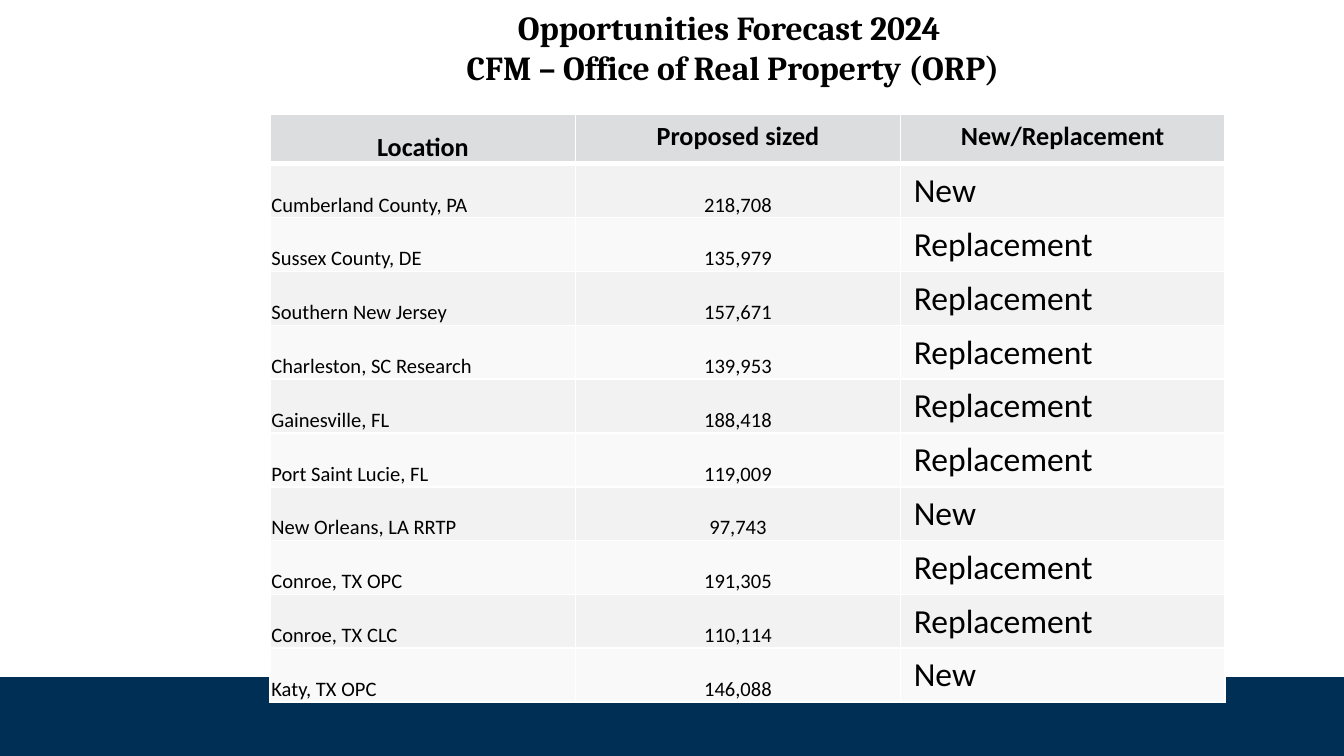
from dataclasses import dataclass

from lxml import etree
from pptx import Presentation
from pptx.dml.color import RGBColor
from pptx.enum.shapes import MSO_SHAPE
from pptx.enum.text import MSO_ANCHOR, MSO_AUTO_SIZE, PP_ALIGN
from pptx.oxml.ns import qn
from pptx.util import Pt

RECTANGLE = MSO_SHAPE.RECTANGLE
TOP, BOTTOM = MSO_ANCHOR.TOP, MSO_ANCHOR.BOTTOM
LEFT, CENTER = PP_ALIGN.LEFT, PP_ALIGN.CENTER
GROW_TO_TEXT = MSO_AUTO_SIZE.SHAPE_TO_FIT_TEXT


@dataclass(frozen=True)
class Theme:
    navy: str = "002F56"
    text: str = "000000"
    border: str = "FFFFFF"
    header_fill: str = "DCDDDE"
    band_fills: tuple = ("F2F2F2", "F9F9F9")
    title_font: str = "Cambria"
    body_font: str = "Calibri"
    title_size: int = 18
    header_size: int = 14
    body_size: int = 11
    status_size: int = 18


THEME = Theme()

TITLE = ["Opportunities Forecast 2024 ", "CFM – Office of Real Property (ORP)"]
HEADERS = ["Location", "Proposed sized", "New/Replacement"]
PROJECTS = [
    ("Cumberland County, PA", "218,708", "New"),
    ("Sussex County, DE", "135,979", "Replacement"),
    ("Southern New Jersey", "157,671", "Replacement"),
    ("Charleston, SC Research", "139,953", "Replacement"),
    ("Gainesville, FL", "188,418", "Replacement"),
    ("Port Saint Lucie, FL", "119,009", "Replacement"),
    ("New Orleans, LA RRTP", "97,743", "New"),
    ("Conroe, TX OPC", "191,305", "Replacement"),
    ("Conroe, TX CLC", "110,114", "Replacement"),
    ("Katy, TX OPC", "146,088", "New"),
]
COLUMN_SHARES = (0.32, 0.34, 0.34)
HEADER_HEIGHT = 26.6


def style_paragraph(paragraph, font_name, size, bold, alignment):
    paragraph.alignment = alignment
    font = paragraph.font
    font.name, font.size, font.bold = font_name, Pt(size), bold
    font.color.rgb = RGBColor.from_string(THEME.text)


def set_borders(cell, top=1, bottom=1):
    """Draw the cell's four borders, with widths in points."""
    properties = cell._tc.get_or_add_tcPr()
    for tag, width in (("lnL", 1), ("lnR", 1), ("lnT", top), ("lnB", bottom)):
        line = etree.SubElement(properties, qn(f"a:{tag}"), w=str(Pt(width)))
        fill = etree.SubElement(line, qn("a:solidFill"))
        etree.SubElement(fill, qn("a:srgbClr"), val=THEME.border)


def fill_cell(cell, text, fill, size, bold, alignment, tight):
    cell.text = text
    style_paragraph(cell.text_frame.paragraphs[0], THEME.body_font, size, bold, alignment)
    cell.fill.solid()
    cell.fill.fore_color.rgb = RGBColor.from_string(fill)
    cell.vertical_anchor = BOTTOM if tight else TOP
    if tight:
        cell.margin_left = cell.margin_top = cell.margin_right = Pt(0.7)
        cell.margin_bottom = Pt(0)


def add_footer_band(slide, left, top, width, height):
    band = slide.shapes.add_shape(RECTANGLE, Pt(left), Pt(top), Pt(width), Pt(height))
    band.shadow.inherit = False
    band.fill.solid()
    band.fill.fore_color.rgb = RGBColor.from_string(THEME.navy)
    band.line.fill.background()


def add_title(slide, left, top, width, height):
    box = slide.shapes.add_textbox(Pt(left), Pt(top), Pt(width), Pt(height))
    frame = box.text_frame
    frame.word_wrap = True
    frame.auto_size = GROW_TO_TEXT
    frame.text = "\n".join(TITLE)
    for paragraph in frame.paragraphs:
        style_paragraph(paragraph, THEME.title_font, THEME.title_size, True, CENTER)


def add_forecast_table(slide, left, top, width, height):
    frame = slide.shapes.add_table(
        len(PROJECTS) + 1, len(HEADERS), Pt(left), Pt(top), Pt(width), Pt(height))
    table = frame.table
    for column, share in zip(table.columns, COLUMN_SHARES):
        column.width = Pt(width * share)
    row_height = (height - HEADER_HEIGHT) / len(PROJECTS)
    for index, row in enumerate(table.rows):
        row.height = Pt(row_height if index else HEADER_HEIGHT)

    # Header row, with a heavier rule below it
    for index, header in enumerate(HEADERS):
        cell = table.cell(0, index)
        set_borders(cell, bottom=3)
        fill_cell(cell, header, THEME.header_fill, THEME.header_size, True, CENTER,
                  tight=index == 0)

    # Banded project rows
    column_styles = [
        (THEME.body_size, LEFT, True),
        (THEME.body_size, CENTER, True),
        (THEME.status_size, LEFT, False),
    ]
    for row_index, project in enumerate(PROJECTS, start=1):
        fill = THEME.band_fills[(row_index - 1) % 2]
        for column_index, (text, style) in enumerate(zip(project, column_styles)):
            size, alignment, tight = style
            cell = table.cell(row_index, column_index)
            set_borders(cell, top=3 if row_index == 1 else 1)
            fill_cell(cell, text, fill, size, False, alignment, tight)


def main():
    presentation = Presentation()
    presentation.slide_width, presentation.slide_height = Pt(720), Pt(405)
    slide = presentation.slides.add_slide(presentation.slide_layouts[6])
    add_footer_band(slide, 0, 362.7, 720, 43)
    add_title(slide, 168.5, 0, 448.5, 51)
    add_forecast_table(slide, 144.7, 61.2, 511.6, 300.6)
    presentation.save("out.pptx")


if __name__ == "__main__":
    main()
